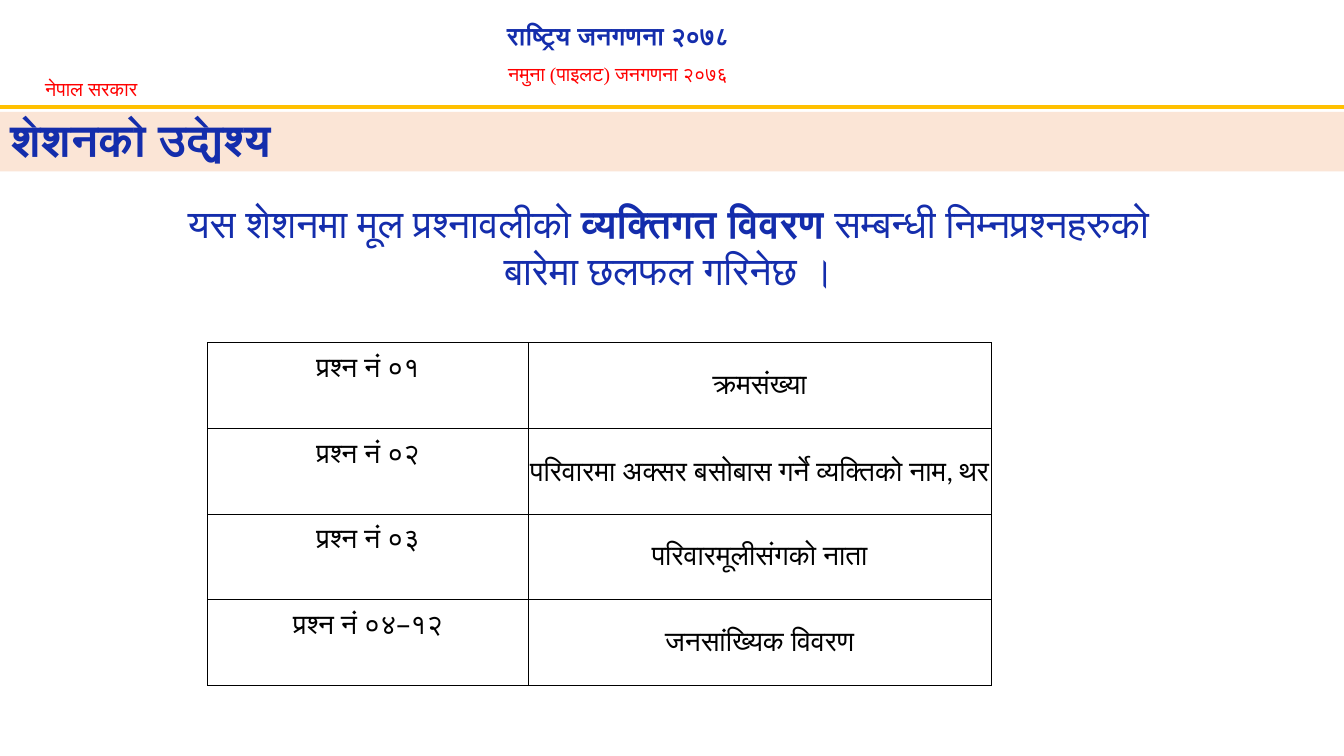
from lxml import etree
from pptx import Presentation
from pptx import util as u
from pptx.dml.color import RGBColor
from pptx.enum import shapes, text
from pptx.oxml import ns

BLUE = RGBColor(0x14, 0x2D, 0xAC)
RED = RGBColor(0xFF, 0x00, 0x00)
GOLD = RGBColor(0xFF, 0xC0, 0x00)
PEACH = RGBColor(0xFB, 0xE5, 0xD6)
BLACK = RGBColor(0x00, 0x00, 0x00)
MID = text.MSO_ANCHOR.MIDDLE
CENTER = text.PP_ALIGN.CENTER

ROWS = [
    ("प्रश्न नं ०१", "क्रमसंख्या"),
    ("प्रश्न नं ०२", "परिवारमा अक्सर बसोबास गर्ने व्यक्तिको नाम, थर"),
    ("प्रश्न नं ०३", "परिवारमूलीसंगको नाता"),
    ("प्रश्न नं ०४–१२", "जनसांख्यिक विवरण"),
]


class Page:
    def __init__(self, deck):
        self.width = deck.slide_width
        self.slide = deck.slides.add_slide(deck.slide_layouts[5])
        self.shapes = self.slide.shapes

    def style(self, font, size, color, name="Calibri", bold=False):
        font.size, font.name, font.bold = u.Pt(size), name, bold
        font.color.rgb = color

    def title(self, words, top, height):
        box = self.shapes.title
        box.left, box.top = 0, u.Inches(top)
        box.width, box.height = self.width, u.Inches(height)
        box.fill.solid()
        box.fill.fore_color.rgb = PEACH
        frame = box.text_frame
        frame.text = words
        frame.auto_size = text.MSO_AUTO_SIZE.NONE
        frame.vertical_anchor = MID
        para = frame.paragraphs[0]
        para.alignment = text.PP_ALIGN.LEFT
        para.line_spacing = 0.9
        self.style(para.font, 32, BLUE, bold=True)

    def box(self, left, top, width, height, wrap=False):
        """Add a text box and return its text frame."""
        spot = map(u.Inches, (left, top, width, height))
        frame = self.shapes.add_textbox(*spot).text_frame
        frame.word_wrap = wrap
        frame.auto_size = text.MSO_AUTO_SIZE.SHAPE_TO_FIT_TEXT
        return frame

    def run(self, para, words, *look, **more):
        run = para.add_run()
        run.text = words
        self.style(run.font, *look, **more)

    def rule(self, top):
        y = u.Inches(top)
        line = self.shapes.add_connector(
            shapes.MSO_CONNECTOR.STRAIGHT, 0, y, self.width, y)
        line.line.color.rgb = GOLD
        line.line.width = u.Pt(3)
        etree.SubElement(line._element.spPr, ns.qn("a:effectLst"))

    def border(self, cell):
        props = cell._tc.get_or_add_tcPr()
        for side in "LRTB":
            line = etree.SubElement(props, ns.qn("a:ln" + side), w="6350")
            fill = etree.SubElement(line, ns.qn("a:solidFill"))
            etree.SubElement(fill, ns.qn("a:srgbClr"), val=str(BLACK))

    def table(self, rows, left, top, widths, height):
        size = map(u.Inches, (left, top, sum(widths), height * len(rows)))
        grid = self.shapes.add_table(len(rows), len(widths), *size).table
        grid.first_row = grid.horz_banding = False
        for col, width in zip(grid.columns, widths):
            col.width = u.Inches(width)
        for r, row in enumerate(rows):
            for c, words in enumerate(row):
                cell = grid.cell(r, c)
                self.border(cell)
                cell.fill.background()
                cell.text = words
                cell.vertical_anchor = MID
                cell.margin_left = cell.margin_right = u.Inches(0.01)
                cell.margin_top = u.Inches(0.01)
                # Question numbers sit above the middle of the row
                cell.margin_bottom = u.Inches(0 if c else 0.34)
                para = cell.text_frame.paragraphs[0]
                para.alignment = CENTER
                name = "Calibri" if c else "Lato"
                self.style(para.font, 20, BLACK, name)


def main():
    deck = Presentation()
    deck.slide_width, deck.slide_height = u.Inches(13.33), u.Inches(7.5)
    page = Page(deck)

    office = page.box(0.35, 0.71, 1.28, 0.34).paragraphs[0]
    office.text = "नेपाल सरकार"
    page.style(office.font, 14, RED, "Arial Narrow")
    page.rule(1.06)

    census = page.box(4.68, 0, 2.9, 0.88).paragraphs[0]
    census.alignment = CENTER
    census.line_spacing = 1.5
    page.run(census, "राष्ट्रिय जनगणना २०७८", 18, BLUE, bold=True)
    census.add_line_break()
    page.run(census, "नमुना (पाइलट) जनगणना २०७६", 14, RED, "Times New Roman")

    page.title("शेशनको उद्येश्य", 1.11, 0.59)

    goal = page.box(0.33, 1.93, 12.6, 1.04, wrap=True)
    first, last = goal.paragraphs[0], goal.add_paragraph()
    first.alignment = last.alignment = CENTER
    page.run(first, "यस शेशनमा मूल प्रश्नावलीको ", 28, BLUE)
    page.run(first, "व्यक्तिगत विवरण ", 28, BLUE, bold=True)
    page.run(first, "सम्बन्धी निम्नप्रश्नहरुको", 28, BLUE)
    page.run(last, "बारेमा छलफल गरिनेछ ।", 28, BLUE)

    page.table(ROWS, 2.06, 3.4, (3.18, 4.59), 0.85)
    deck.save("out.pptx")


if __name__ == "__main__":
    main()
